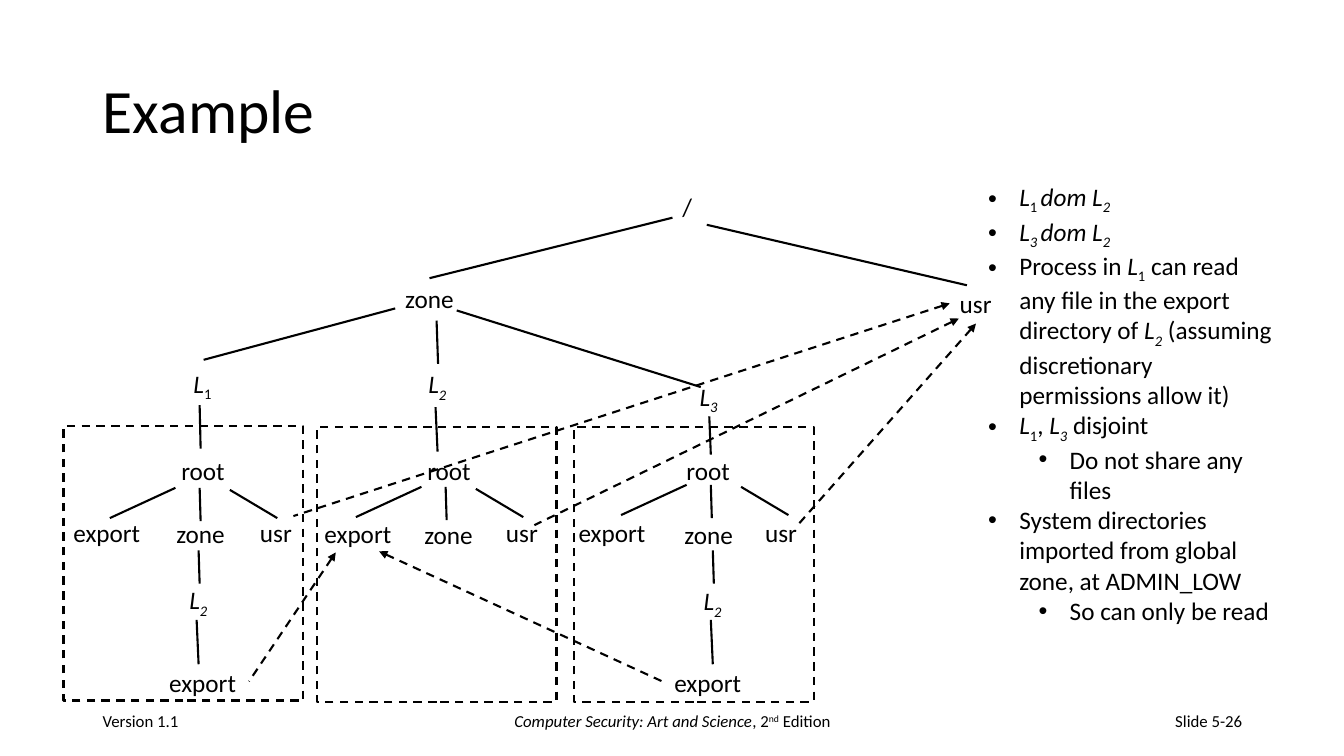
from lxml import etree
from pptx import Presentation
from pptx.dml.color import RGBColor
from pptx.enum.dml import MSO_LINE
from pptx.enum.shapes import MSO_CONNECTOR, MSO_SHAPE
from pptx.enum.text import MSO_ANCHOR, MSO_AUTO_SIZE, PP_ALIGN
from pptx.oxml.ns import qn
from pptx.util import Inches, Pt

STRAIGHT = MSO_CONNECTOR.STRAIGHT
RECTANGLE = MSO_SHAPE.RECTANGLE
DASH = MSO_LINE.DASH
MIDDLE, TOP = MSO_ANCHOR.MIDDLE, MSO_ANCHOR.TOP
LEFT, CENTER, RIGHT = PP_ALIGN.LEFT, PP_ALIGN.CENTER, PP_ALIGN.RIGHT
FIT_SHAPE, NO_FIT = MSO_AUTO_SIZE.SHAPE_TO_FIT_TEXT, MSO_AUTO_SIZE.NONE
TOP_SIDE, LEFT_SIDE, BOTTOM_SIDE = 0, 1, 2
BLACK = "000000"
FONT = "Calibri"
ITALIC, SUB, SUPER = "italic", "sub", "super"
BASELINES = {SUB: "-25000", SUPER: "30000"}

L = ("L", ITALIC)
ONE = ("1", SUB)
TWO = ("2", ITALIC, SUB)
THREE = ("3", ITALIC, SUB)
DOM_L2 = [("dom L", ITALIC), TWO]

BULLETS = [
    (0, [L, ("1 ", SUB), *DOM_L2]),
    (0, [L, ("3 ", ITALIC, SUB), *DOM_L2]),
    (0, [("Process in ",), L, ONE,
         (" can read any file in the export directory of ",), L, TWO,
         (" (assuming discretionary permissions allow it)",)]),
    (0, [L, ONE, (", ",), L, THREE, (" disjoint",)]),
    (1, [("Do not share any files",)]),
    (0, [("System directories imported from global zone, at ADMIN_LOW",)]),
    (1, [("So can only be read",)]),
]

TREE_LINES = [
    (6.67, 2.16, 4.26, 2.76),
    (9.59, 2.83, 7.01, 2.23),
    (6.95, 3.84, 4.53, 3.08),
    (3.92, 3.06, 2.02, 3.57),
    (1.98, 4.02, 1.99, 4.45),
    (4.32, 4.04, 4.34, 4.48),
]


def color(value):
    return RGBColor.from_string(value)


def place(shape, left, top, width, height):
    shape.left, shape.top = Inches(left), Inches(top)
    shape.width, shape.height = Inches(width), Inches(height)


def add_runs(paragraph, runs, size):
    for text, *styles in runs:
        run = paragraph.add_run()
        run.text = text
        run.font.name = FONT
        run.font.size = Pt(size)
        run.font.color.rgb = color(BLACK)
        run.font.italic = ITALIC in styles
        for style in styles:
            if style in BASELINES:
                run.font._element.set("baseline", BASELINES[style])


def add_label(slide, left, top, width, runs):
    box = slide.shapes.add_textbox(Inches(left), Inches(top), Inches(width), Inches(0.4))
    box.text_frame.word_wrap = False
    box.text_frame.auto_size = FIT_SHAPE
    add_runs(box.text_frame.paragraphs[0], runs, 18)
    return box


def add_word(slide, left, top, word):
    widths = {"/": 1.43, "root": 0.64, "export": 0.87, "zone": 0.69, "usr": 0.52}
    return add_label(slide, left, top, widths[word], [(word,)])


def add_level(slide, left, top, number):
    return add_label(slide, left, top, 0.39, [L, number])


def format_line(line):
    line.color.rgb = color(BLACK)
    line.width = Pt(1.5)


def add_line(slide, x1, y1, x2, y2):
    connector = slide.shapes.add_connector(
        STRAIGHT, Inches(x1), Inches(y1), Inches(x2), Inches(y2))
    format_line(connector.line)
    etree.SubElement(connector._element.spPr, qn("a:effectLst"))
    return connector


def add_import_arrow(slide, x1, y1, x2, y2):
    connector = add_line(slide, x1, y1, x2, y2)
    connector.line.dash_style = DASH
    outline = connector.line._get_or_add_ln()
    etree.SubElement(outline, qn("a:headEnd"), type="triangle")
    return connector


def add_zone_frame(slide, left, top):
    frame = slide.shapes.add_shape(
        RECTANGLE, Inches(left), Inches(top), Inches(2.38), Inches(2.72))
    frame.shadow.inherit = False
    frame.fill.background()
    format_line(frame.line)
    frame.line.dash_style = DASH


def add_zone(slide, frame, root_x, export_x, zone, branch):
    add_zone_frame(slide, *frame)
    add_word(slide, root_x, 4.47, "root")
    add_word(slide, export_x, 5.08 if frame[0] != 3.14 else 5.09, "export")
    add_word(slide, *zone, "zone")
    add_word(slide, root_x + 0.78, 5.08, "usr")
    x, y = branch
    add_line(slide, x + 0.28, y, x + 0.29, y + 0.33)
    add_line(slide, x + 0.04, y, x - 0.61, y + 0.3)
    add_line(slide, x + 0.58, y + 0.02, x + 1.05, y + 0.3)


def add_mounted_level(slide, left, top, export_x):
    add_level(slide, left, top, TWO)
    add_line(slide, left + 0.19, 5.46, left + 0.2, 5.79)
    add_line(slide, left + 0.17, 6.15, left + 0.19, 6.59)
    return add_word(slide, export_x, 6.57, "export")


def add_global_tree(slide):
    add_word(slide, 6.67, 1.85, "/")
    add_word(slide, 3.92, 2.76, "zone")
    add_level(slide, 1.82, 3.6, ONE)
    level_two = add_level(slide, 4.15, 3.61, TWO)
    level_three = add_level(slide, 6.84, 3.73, THREE)
    for points in TREE_LINES:
        add_line(slide, *points)
    add_line(slide, 4.33, 3.18, 4.34, 3.61).end_connect(level_two, TOP_SIDE)
    add_line(slide, 7.04, 4.13, 7.05, 4.51).begin_connect(level_three, BOTTOM_SIDE)
    return add_word(slide, 9.42, 2.81, "usr")


def add_import_arrows(slide, global_usr, mounted_export):
    add_import_arrow(slide, 3.33, 5.48, 2.47, 6.76)
    add_import_arrow(slide, 3.76, 5.47, 6.59, 6.77).end_connect(mounted_export, LEFT_SIDE)
    add_import_arrow(slide, 9.68, 3.21, 7.92, 5.2).begin_connect(global_usr, BOTTOM_SIDE)
    add_import_arrow(slide, 9.51, 3.16, 5.3, 5.21)
    add_import_arrow(slide, 9.42, 3.01, 2.91, 5.12).begin_connect(global_usr, LEFT_SIDE)


def fill_title(title):
    place(title, 0.92, 0.4, 11.5, 1.45)
    title.text_frame.vertical_anchor = MIDDLE
    title.text_frame.auto_size = NO_FIT
    paragraph = title.text_frame.paragraphs[0]
    paragraph.alignment = LEFT
    paragraph.line_spacing = 0.9
    add_runs(paragraph, [("Example",)], 44)


def fill_bullets(body):
    place(body, 9.7, 1.75, 3.09, 4.34)
    frame = body.text_frame
    frame.word_wrap = True
    frame.vertical_anchor = TOP
    frame.auto_size = FIT_SHAPE
    for index, (level, runs) in enumerate(BULLETS):
        paragraph = frame.add_paragraph() if index else frame.paragraphs[0]
        paragraph.level = level
        paragraph.alignment = LEFT
        paragraph.space_before = Pt(0)
        properties = paragraph._p.get_or_add_pPr()
        properties.set("marL", str(Inches(0.31 + 0.5 * level)))
        properties.set("indent", str(Inches(-0.31)))
        etree.SubElement(properties, qn("a:buFont"), typeface="Arial")
        etree.SubElement(properties, qn("a:buChar"), char="•")
        add_runs(paragraph, runs, 18)


def add_footer(slide, left, width, alignment, runs):
    box = slide.shapes.add_textbox(Inches(left), Inches(6.95), Inches(width), Inches(0.4))
    box.text_frame.word_wrap = True
    box.text_frame.vertical_anchor = MIDDLE
    paragraph = box.text_frame.paragraphs[0]
    paragraph.alignment = alignment
    add_runs(paragraph, runs, 12)


def main():
    presentation = Presentation()
    presentation.slide_width, presentation.slide_height = Inches(13.33), Inches(7.5)
    slide = presentation.slides.add_slide(presentation.slide_layouts[1])
    fill_title(slide.shapes.title)
    fill_bullets(slide.placeholders[1])
    global_usr = add_global_tree(slide)
    add_zone(slide, (0.63, 4.23), 1.7, 0.63, (1.65, 5.09), (1.7, 4.84))
    add_zone(slide, (3.14, 4.24), 4.14, 3.12, (4.11, 5.1), (4.14, 4.83))
    add_zone(slide, (5.69, 4.24), 6.71, 5.64, (6.69, 5.1), (6.77, 4.81))
    add_mounted_level(slide, 1.78, 5.75, 1.58)
    mounted_export = add_mounted_level(slide, 6.88, 5.76, 6.59)
    add_import_arrows(slide, global_usr, mounted_export)
    add_footer(slide, 0.92, 3, LEFT, [("Version 1.1",)])
    add_footer(slide, 4.42, 4.5, CENTER, [
        ("Computer Security: Art and Science", ITALIC), (", 2",), ("nd", SUPER), (" Edition",)])
    add_footer(slide, 9.42, 3, RIGHT, [("Slide 5-26",)])
    presentation.save("out.pptx")


if __name__ == "__main__":
    main()
